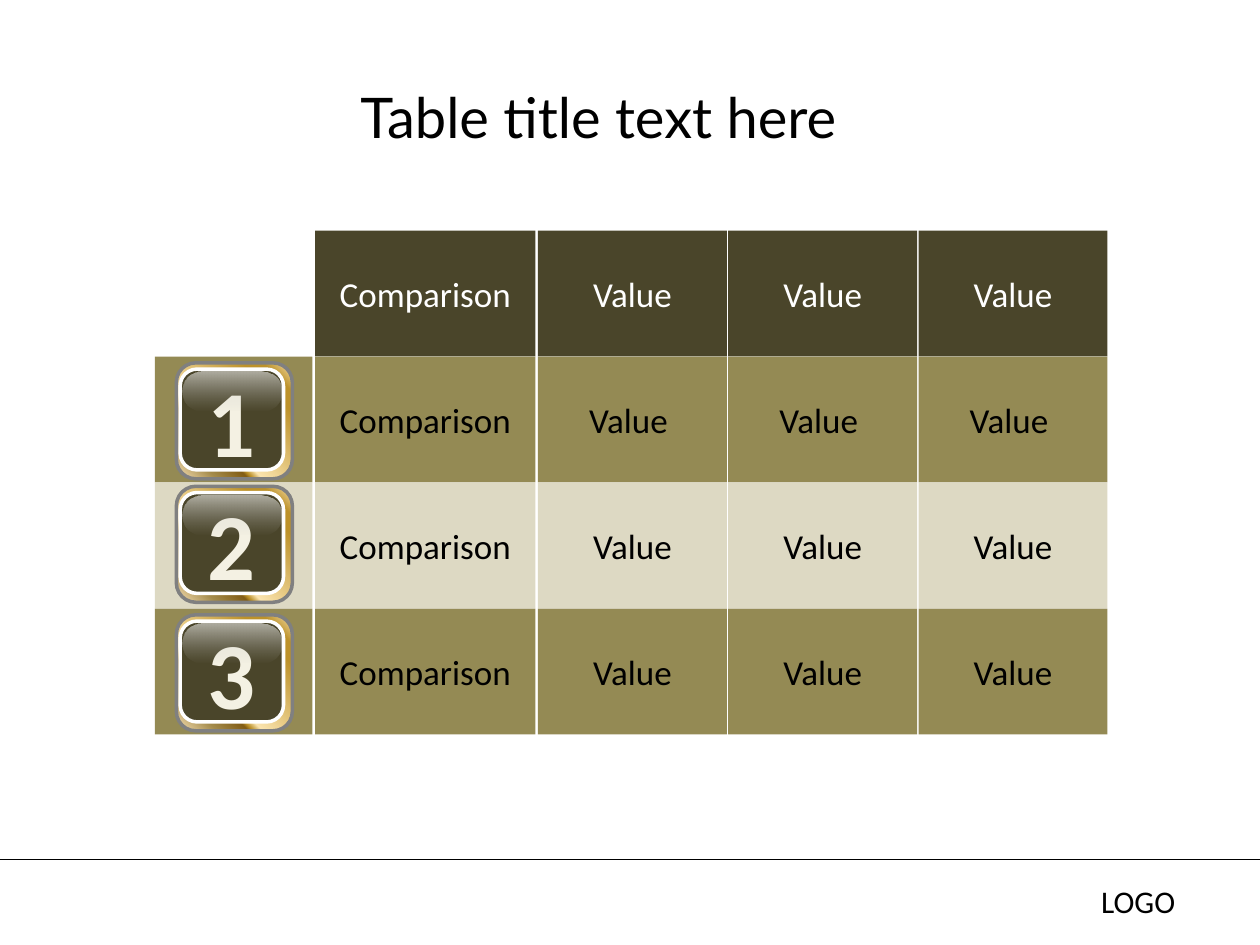
from dataclasses import dataclass

from lxml import etree
from pptx import Presentation
from pptx.dml.color import RGBColor
from pptx.enum.shapes import MSO_CONNECTOR, MSO_SHAPE
from pptx.enum.text import MSO_ANCHOR, MSO_AUTO_SIZE, PP_ALIGN
from pptx.oxml import parse_xml
from pptx.oxml.ns import nsdecls, qn
from pptx.util import Inches, Pt

RECT, ROUND = MSO_SHAPE.RECTANGLE, MSO_SHAPE.ROUNDED_RECTANGLE
STRAIGHT = MSO_CONNECTOR.STRAIGHT
CENTER, MIDDLE = PP_ALIGN.CENTER, MSO_ANCHOR.MIDDLE
GROW = MSO_AUTO_SIZE.SHAPE_TO_FIT_TEXT


@dataclass(frozen=True)
class Theme:
    font: str = "Calibri"
    title_font: str = "Lato"
    title: int = 32
    cell: int = 20
    digit: int = 54
    footer: int = 18
    black: str = "000000"
    white: str = "FFFFFF"
    dark: str = "4A452A"
    olive: str = "948A54"
    sand: str = "DDD9C3"
    cream: str = "F4F1E3"
    rim: str = "808080"
    # Gradient stops: position, colour, opacity (all in percent)
    gold: tuple = ((0, "FBE4AE", 100), (13, "BD922A", 100), (21, "BD922A", 100),
                   (63, "FBE4AE", 100), (67, "BD922A", 100), (69, "835E17", 100),
                   (82, "A28949", 100), (100, "FAE3B7", 100))
    gloss: tuple = ((0, "FFFFFF", 56), (100, "B6B6B6", 0))


T = Theme()

# Grid: column lefts and widths, row pitch
LEFTS = [1.23, 2.5] + [4.27 + 1.51 * i for i in range(3)]
WIDTHS = [1.25, 1.75] + [1.5] * 3
TOP, ROW = 1.83, 1

# Row label, fill, text colour, cell texts, badge drop from the row top
ROWS = [
    ("", T.dark, T.white, ["Comparison"] + ["Value"] * 3, 0),
    ("1", T.olive, T.black, ["Comparison"] + ["Value "] * 3, 0.05),
    ("2", T.sand, T.black, ["Comparison"] + ["Value"] * 3, 0.03),
    ("3", T.olive, T.black, ["Comparison"] + ["Value"] * 3, 0.05),
]


def write(tf, text, size, color, font=T.font, bold=False, align=CENTER):
    """Fill a text frame with one formatted run and return the run."""
    tf.word_wrap = True
    p = tf.paragraphs[0]
    p.alignment = align
    r = p.add_run()
    r.text = text
    for name, value in dict(name=font, size=Pt(size), bold=bold).items():
        setattr(r.font, name, value)
    r.font.color.rgb = RGBColor.from_string(color)
    return r


def add_box(shapes, kind, at, fill=None, line=None):
    """Add a flat preset shape with an optional solid fill and 2 pt line."""
    sp = shapes.add_shape(kind, *map(Inches, at))
    sp.shadow.inherit = False
    sp.text_frame.vertical_anchor = MIDDLE
    if fill:
        sp.fill.solid()
        sp.fill.fore_color.rgb = RGBColor.from_string(fill)
    if line:
        sp.line.color.rgb = RGBColor.from_string(line)
        sp.line.width = Pt(2)
    else:
        sp.line.fill.background()
    return sp


def set_gradient(sp, stops, angle):
    gs = "".join(
        f'<a:gs pos="{pos * 1000}"><a:srgbClr val="{color}">'
        f'<a:alpha val="{alpha * 1000}"/></a:srgbClr></a:gs>'
        for pos, color, alpha in stops)
    grad = parse_xml(
        f'<a:gradFill {nsdecls("a")} rotWithShape="1"><a:gsLst>{gs}</a:gsLst>'
        f'<a:lin ang="{angle * 60000}" scaled="0"/></a:gradFill>')
    sp.element.spPr.find(qn("a:prstGeom")).addnext(grad)


def outline_text(r, color):
    ln = parse_xml(
        f'<a:ln {nsdecls("a")} w="12700"><a:solidFill>'
        f'<a:srgbClr val="{color}"/></a:solidFill></a:ln>')
    r.font.fill.solid()
    r.font.fill.fore_color.rgb = RGBColor.from_string(T.cream)
    r.font._element.insert(0, ln)


def add_badge(shapes, digit, top):
    """Gold frame, dark button with a digit, and a gloss over its top."""
    frame = add_box(shapes, ROUND, (1.4, top, 0.92, 0.92), line=T.rim)
    set_gradient(frame, T.gold, 135)
    button = add_box(shapes, ROUND, (1.43, top + 0.05, 0.82, 0.8), T.dark, T.white)
    outline_text(write(button.text_frame, digit, T.digit, T.cream, bold=True), T.dark)
    gloss = add_box(shapes, ROUND, (1.45, top + 0.07, 0.78, 0.31))
    gloss.adjustments[0] = 0.5
    set_gradient(gloss, T.gloss, 90)


def add_row(s, index, label, fill, color, texts, drop):
    shapes = s.shapes.add_group_shape().shapes
    top = TOP + index * ROW
    for left, width, text in zip(LEFTS, WIDTHS, [label] + texts):
        if left == LEFTS[0] and not label:
            continue
        sp = add_box(shapes, RECT, (left, top, width, ROW), fill)
        if left != LEFTS[0]:
            write(sp.text_frame, text, T.cell, color)
    if label:
        add_badge(shapes, label, top + drop)


def add_title(s, text):
    sp = s.shapes.title
    box = dict(left=0.25, top=0.57, width=9, height=0.7)
    for name, value in box.items():
        setattr(sp, name, Inches(value))
    sp.text_frame.vertical_anchor = MIDDLE
    write(sp.text_frame, text, T.title, T.black, T.title_font)


def add_footer(s, prs, text):
    y = Inches(6.82)
    rule = s.shapes.add_connector(STRAIGHT, 0, y, prs.slide_width, y)
    rule.line.color.rgb = RGBColor.from_string(T.black)
    rule.line.width = Pt(0.75)
    etree.SubElement(rule.element.spPr, qn("a:effectLst"))
    tf = s.shapes.add_textbox(*map(Inches, (8.64, 6.95, 1.11, 0.4))).text_frame
    tf.auto_size = GROW
    write(tf, text, T.footer, T.black, align=PP_ALIGN.LEFT)


def main():
    prs = Presentation()
    prs.slide_width, prs.slide_height = Inches(10), Inches(7.5)
    s = prs.slides.add_slide(prs.slide_layouts[5])
    add_footer(s, prs, "LOGO")
    add_title(s, "Table title text here")
    for index, row in enumerate(ROWS):
        add_row(s, index, *row)
    prs.save("out.pptx")


if __name__ == "__main__":
    main()
